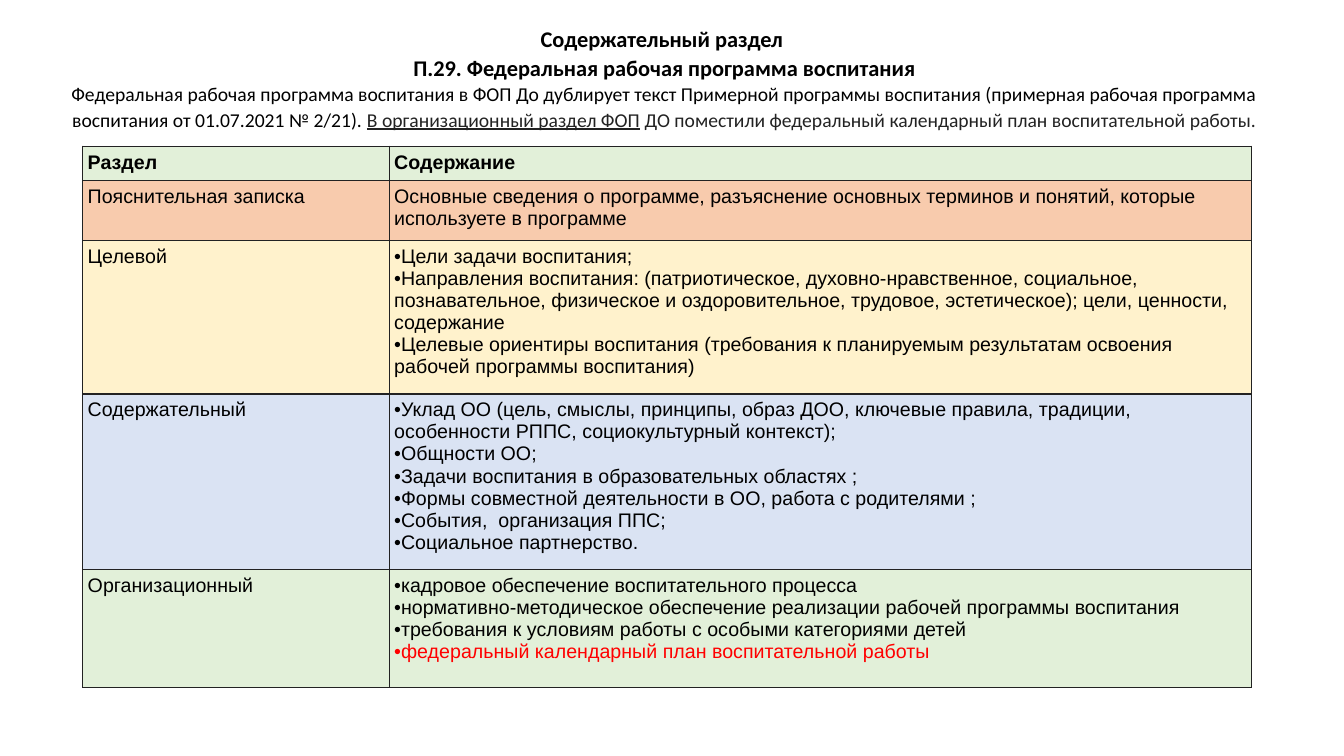
from pptx import Presentation
from pptx.dml.color import RGBColor
from pptx.enum.text import MSO_ANCHOR, PP_ALIGN
from pptx.oxml import parse_xml
from pptx.oxml.ns import nsdecls
from pptx.util import Inches, Pt

CENTER = PP_ALIGN.CENTER
TOP = MSO_ANCHOR.TOP
BLACK = RGBColor(0x00, 0x00, 0x00)
DARK = RGBColor(0x22, 0x22, 0x22)
RED = RGBColor(0xFF, 0x00, 0x00)
GREEN = RGBColor(0xE2, 0xF0, 0xD9)
ORANGE = RGBColor(0xF8, 0xCB, 0xAD)
YELLOW = RGBColor(0xFF, 0xF2, 0xCC)
BLUE = RGBColor(0xDA, 0xE3, 0xF3)

COLS = [3.04, 8.55]
PLAN = "федеральный календарный план воспитательной работы"
ROWS = [
    (0.34, GREEN, "Раздел", ["Содержание"]),
    (0.6, ORANGE, "Пояснительная записка", [
        "Основные сведения о программе, разъяснение основных терминов и понятий, "
        "которые используете в программе"]),
    (1.52, YELLOW, "Целевой", [
        "Цели задачи воспитания;",
        "Направления воспитания: (патриотическое, духовно-нравственное, социальное, "
        "познавательное, физическое и оздоровительное, трудовое, эстетическое); "
        "цели, ценности, содержание",
        "Целевые ориентиры воспитания (требования к планируемым результатам "
        "освоения рабочей программы воспитания)"]),
    (1.74, BLUE, "Содержательный", [
        "Уклад ОО (цель, смыслы, принципы, образ ДОО, ключевые правила, традиции, "
        "особенности РППС, социокультурный контекст);",
        "Общности ОО;",
        "Задачи воспитания в образовательных областях ;",
        "Формы совместной деятельности в ОО, работа с родителями ;",
        "События,  организация ППС;",
        "Социальное партнерство."]),
    (1.17, GREEN, "Организационный", [
        "кадровое обеспечение воспитательного процесса",
        "нормативно-методическое обеспечение реализации рабочей программы воспитания",
        "требования к условиям работы с особыми категориями детей",
        PLAN]),
]


def add_run(para, text, size, face, color=BLACK, bold=False, under=False):
    run = para.add_run()
    run.text = text
    font = run.font
    font.size = Pt(size)
    font.name = face
    font.bold = bold
    font.underline = under
    font.color.rgb = color


def add_title(slide):
    box = slide.shapes.add_textbox(Inches(0.35), Inches(0), Inches(12.48), Inches(1.45))
    frame = box.text_frame
    frame.word_wrap = True
    frame.vertical_anchor = TOP
    frame.margin_top = Inches(0.23)
    para = frame.paragraphs[0]
    para.alignment = CENTER
    para.line_spacing = 1.07
    para.space_after = Pt(7.5)
    for line in ("Содержательный раздел ", "П.29. Федеральная рабочая программа воспитания"):
        add_run(para, line, 16, "Calibri", bold=True)
        para.add_line_break()
    add_run(para, "Федеральная рабочая программа воспитания в ФОП До дублирует текст "
            "Примерной программы воспитания (примерная рабочая программа воспитания "
            "от 01.07.2021 № 2/21). ", 14, "Calibri")
    add_run(para, "В организационный раздел ФОП", 14, "Calibri", DARK, under=True)
    add_run(para, " ДО поместили федеральный календарный план воспитательной работы.",
            14, "Calibri", DARK)


def add_bullet(para):
    props = para._p.get_or_add_pPr()
    props.set("marL", "0")
    props.set("indent", str(-Inches(0.38)))
    props.append(parse_xml(f'<a:buFont {nsdecls("a")} typeface="Arial"/>'))
    props.append(parse_xml(f'<a:buChar {nsdecls("a")} char="•"/>'))
    props.append(parse_xml(
        f'<a:tabLst {nsdecls("a")}><a:tab pos="{Inches(0.5)}" algn="l"/></a:tabLst>'))


def add_border(cell):
    props = cell._tc.get_or_add_tcPr()
    for index, side in enumerate(("lnL", "lnR", "lnT", "lnB")):
        props.insert(index, parse_xml(
            f'<a:{side} {nsdecls("a")} w="{Pt(1)}"><a:solidFill>'
            f'<a:srgbClr val="{DARK}"/></a:solidFill></a:{side}>'))


def fill_cell(cell, items, color, bold):
    cell.margin_left = cell.margin_right = Inches(0.05)
    cell.margin_top = cell.margin_bottom = Inches(0.05)
    cell.fill.solid()
    cell.fill.fore_color.rgb = color
    add_border(cell)
    frame = cell.text_frame
    for index, item in enumerate(items):
        para = frame.add_paragraph() if index else frame.paragraphs[0]
        if len(items) > 1:
            add_bullet(para)
        add_run(para, item, 14, "Arial", RED if item == PLAN else BLACK, bold)


def add_grid(slide):
    frame = slide.shapes.add_table(
        len(ROWS), len(COLS), Inches(0.82), Inches(1.45),
        Inches(sum(COLS)), Inches(sum(row[0] for row in ROWS)))
    table = frame.table
    table.horz_banding = False
    for column, width in zip(table.columns, COLS):
        column.width = Inches(width)
    for index, (height, color, name, items) in enumerate(ROWS):
        table.rows[index].height = Inches(height)
        fill_cell(table.cell(index, 0), [name], color, index == 0)
        fill_cell(table.cell(index, 1), items, color, index == 0)


def main():
    deck = Presentation()
    deck.slide_width = Inches(13.33)
    deck.slide_height = Inches(7.5)
    slide = deck.slides.add_slide(deck.slide_layouts[6])
    add_title(slide)
    add_grid(slide)
    deck.save("out.pptx")


if __name__ == "__main__":
    main()
